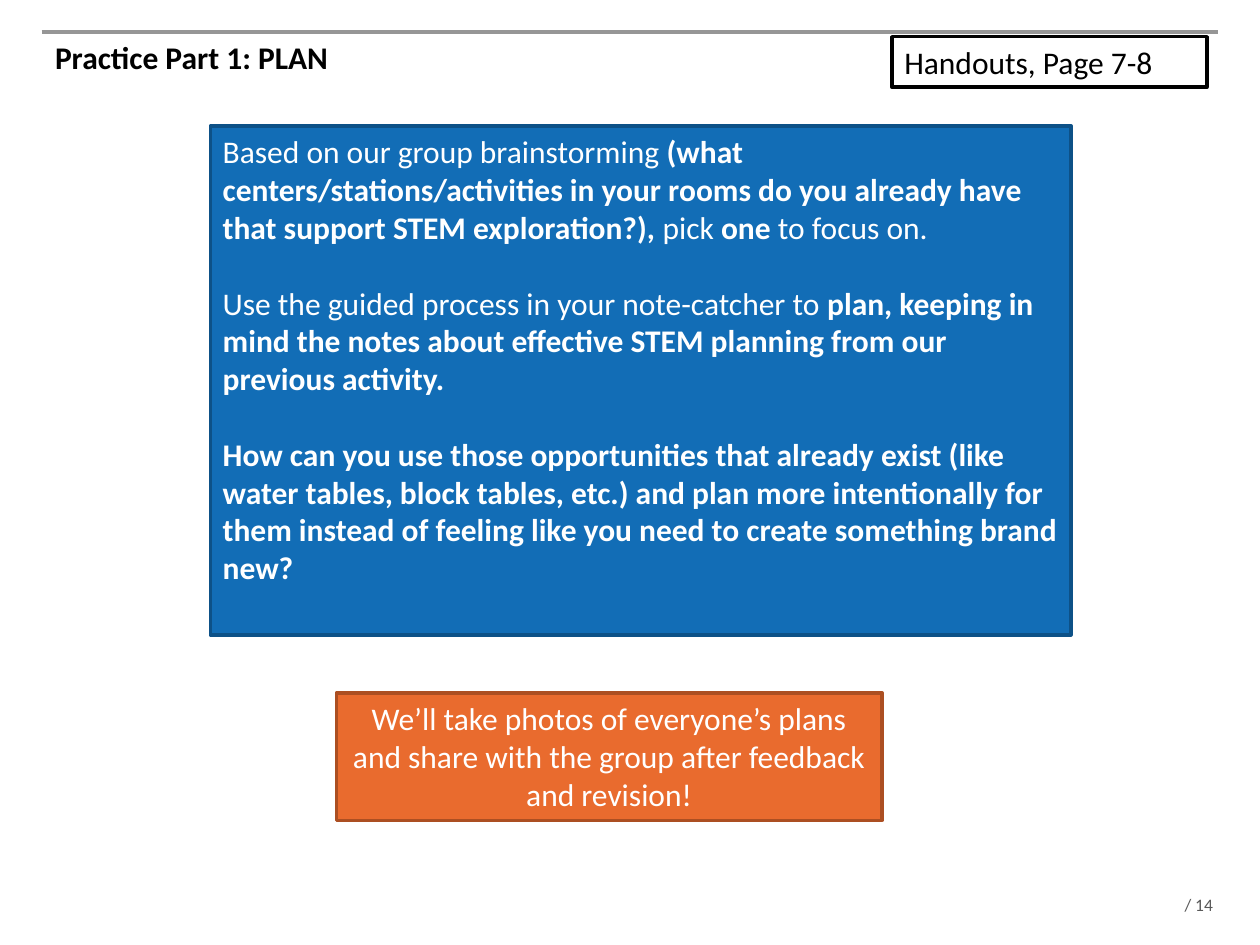
from dataclasses import dataclass
from typing import Optional

import pptx
import pptx.dml.color
import pptx.enum.shapes
import pptx.enum.text
import pptx.oxml.ns
import pptx.util
from lxml import etree

Cm = pptx.util.Cm
Pt = pptx.util.Pt
ALIGN = pptx.enum.text.PP_ALIGN


@dataclass
class Run:
    text: str
    bold: bool = False


@dataclass
class Box:
    left: float
    top: float
    width: float
    height: float
    paragraphs: list[list[Run]]
    color: str
    fill: Optional[str] = None
    line: Optional[str] = None
    size: float = 18
    align: ALIGN = ALIGN.LEFT
    inset_x: float = 0.25
    inset_y: float = 0.13


def rgb(color: str) -> pptx.dml.color.RGBColor:
    return pptx.dml.color.RGBColor.from_string(color)


def add_box(s: pptx.slide.Slide, box: Box) -> None:
    place = [Cm(v) for v in (box.left, box.top, box.width, box.height)]
    if box.fill:
        sp = s.shapes.add_shape(pptx.enum.shapes.MSO_SHAPE.RECTANGLE, *place)
        sp.shadow.inherit = False
        sp.fill.solid()
        sp.fill.fore_color.rgb = rgb(box.fill)
        sp.line.color.rgb = rgb(box.line)
        sp.line.width = Pt(2)
    else:
        sp = s.shapes.add_textbox(*place)
    tf = sp.text_frame
    tf.word_wrap = True
    tf.vertical_anchor = pptx.enum.text.MSO_ANCHOR.TOP
    tf.margin_left = tf.margin_right = Cm(box.inset_x)
    tf.margin_top = tf.margin_bottom = Cm(box.inset_y)
    for i, runs in enumerate(box.paragraphs):
        p = tf.add_paragraph() if i else tf.paragraphs[0]
        p.alignment = box.align
        if i:
            p.space_before = Pt(21.6)
        p.font.name = "Calibri"
        p.font.size = Pt(box.size)
        p.font.color.rgb = rgb(box.color)
        for run in runs:
            r = p.add_run()
            r.text = run.text
            r.font.bold = run.bold


def add_rule(s: pptx.slide.Slide, left: float, right: float, y: float, color: str) -> None:
    cxn = s.shapes.add_connector(
        pptx.enum.shapes.MSO_CONNECTOR.STRAIGHT, Cm(left), Cm(y), Cm(right), Cm(y)
    )
    cxn.line.color.rgb = rgb(color)
    cxn.line.width = Pt(2)
    sp_pr = cxn._element.find(pptx.oxml.ns.qn("p:spPr"))
    etree.SubElement(sp_pr, pptx.oxml.ns.qn("a:effectLst"))


INSTRUCTIONS = [
    [
        Run("Based on our group brainstorming"),
        Run(
            " (what centers/stations/activities in your rooms do you already have "
            "that support STEM exploration?), ",
            True,
        ),
        Run("pick "),
        Run("one", True),
        Run(" to focus on."),
    ],
    [
        Run("Use the guided process in your note-catcher to "),
        Run(
            "plan, keeping in mind the notes about effective STEM planning "
            "from our previous activity.",
            True,
        ),
    ],
    [
        Run(
            "How can you use those opportunities that already exist (like water tables, "
            "block tables, etc.) and plan more intentionally for them instead of feeling "
            "like you need to create something brand new?",
            True,
        ),
    ],
]
PHOTOS = (
    "We’ll take photos of everyone’s plans and share with the group "
    "after feedback and revision!"
)

BOXES = [
    Box(23.8, 18.03, 1.6, 0.43, [[Run(" / 14")]], "595959", size=10, inset_x=0, inset_y=0),
    Box(0.86, 0.64, 23.67, 2.34, [[Run("Practice Part 1: PLAN", True)]], "000000"),
    Box(4.24, 2.54, 17.35, 10.26, INSTRUCTIONS, "FFFFFF", "126DB6", "0D5187"),
    Box(6.78, 13.97, 11, 2.57, [[Run(PHOTOS)]], "FFFFFF", "E96B2E", "AC4F22", align=ALIGN.CENTER),
    Box(17.98, 0.74, 6.35, 1.02, [[Run("Handouts, Page 7-8")]], "000000", "FFFFFF", "000000"),
]


def main() -> None:
    prs = pptx.Presentation()
    prs.slide_width, prs.slide_height = Cm(25.4), Cm(19.05)
    s = prs.slides.add_slide(prs.slide_layouts[6])
    add_rule(s, 0.84, 24.56, 0.64, "969696")
    for box in BOXES:
        add_box(s, box)
    prs.save("out.pptx")


if __name__ == "__main__":
    main()
